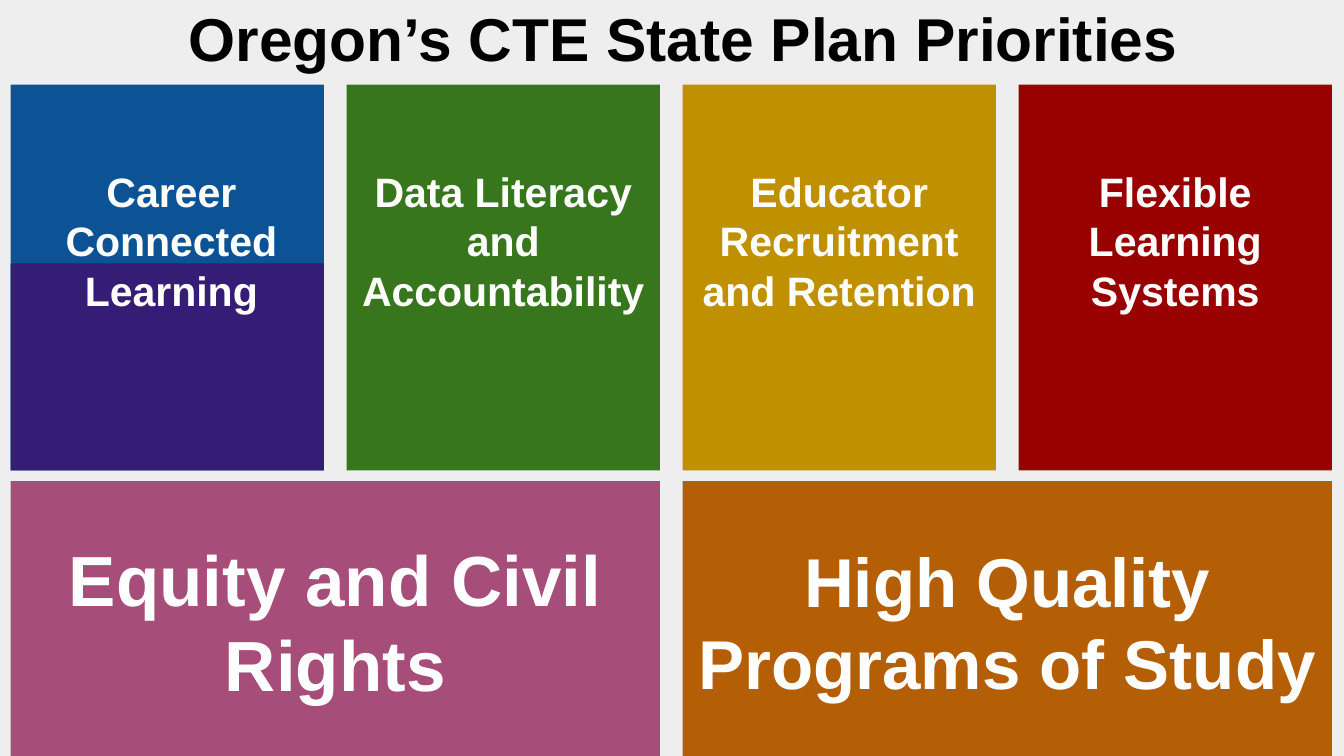
from pptx import Presentation
from pptx.dml.color import RGBColor
from pptx.enum import shapes, text
from pptx.util import Inches, Pt

FONT = "Arial"
GREY = "EEEEEE"
WIDTH = 10
LEFT, PITCH, GAP = 0.08, 2.5, 0.17


def rgb(value):
    return RGBColor.from_string(value)


def write(shape, lines, size, color="FFFFFF", inset=0.1, spacing=1.0,
          anchor=text.MSO_ANCHOR.MIDDLE):
    """Fill a shape with bold centred paragraphs."""
    tf = shape.text_frame
    tf.word_wrap = True
    tf.auto_size = text.MSO_AUTO_SIZE.NONE
    tf.vertical_anchor = anchor
    tf.margin_left = tf.margin_right = Inches(0.1)
    tf.margin_top = tf.margin_bottom = Inches(inset)
    tf.text = "\n".join(lines)
    for p in tf.paragraphs:
        p.alignment = text.PP_ALIGN.CENTER
        p.line_spacing = spacing
        p.font.name, p.font.size, p.font.bold = FONT, Pt(size), True
        p.font.color.rgb = rgb(color)


def add_tile(s, box, fill, lines=(), size=22):
    """Plain rectangle, with a label when lines are given."""
    sp = s.shapes.add_shape(shapes.MSO_SHAPE.RECTANGLE, *map(Inches, box))
    sp.shadow.inherit = False
    sp.fill.solid()
    sp.fill.fore_color.rgb = rgb(fill)
    sp.line.fill.background()
    if lines:
        write(sp, lines, size)


def add_career_tile(s, x, y, w, h):
    """Two-tone tile with its label across both colours."""
    add_tile(s, (x, y, w, h), "0B5394")
    add_tile(s, (x, y + 1.45, w, h - 1.45), "351C75")
    label = s.shapes.add_textbox(*map(Inches, (x + 0.25, y + 0.63, 1.89, 1.31)))
    write(label, ["Career Connected Learning"], 22, anchor=text.MSO_ANCHOR.TOP)


def add_top_row(s, x, y, w, h):
    add_career_tile(s, x, y + 0.43, w, h - 0.43)
    tiles = [
        ("38761D", ["Data Literacy and Accountability"]),
        ("BF9000", ["Educator Recruitment and Retention"]),
        ("990000", ["Flexible Learning", "Systems"]),
    ]
    for i, (fill, lines) in enumerate(tiles, start=1):
        add_tile(s, (x + i * PITCH, y, w, h), fill, lines)


def add_bottom_row(s, x, y, w, h):
    tiles = [
        ("A64D79", "Equity and Civil Rights", 38),
        ("B45F06", "High Quality Programs of Study", 37),
    ]
    for i, (fill, label, size) in enumerate(tiles):
        add_tile(s, (x + i * 2 * PITCH, y, w, h), fill, [label], size)


def add_title(s, x, y, w, h):
    title = s.shapes.title
    title.left, title.top, title.width, title.height = map(Inches, (x, y, w, h))
    title.fill.solid()
    title.fill.fore_color.rgb = rgb(GREY)
    write(title, ["Oregon’s CTE State Plan Priorities"], 32.4, "000000",
          inset=0.05, spacing=0.9)
    # The title band covers the tops of the tiles
    s.shapes._spTree.append(title._element)


def main():
    prs = Presentation()
    prs.slide_width = Inches(WIDTH)
    prs.slide_height = Inches(WIDTH * 9 / 16)
    s = prs.slides.add_slide(prs.slide_layouts[5])

    add_tile(s, (0, 0.05, WIDTH, 5.7), GREY)  # backdrop
    add_top_row(s, LEFT, 0.08, PITCH - GAP, 3.42)
    add_bottom_row(s, LEFT, 3.58, 2 * PITCH - GAP, 2.08)
    add_title(s, 0, 0, 10.17, 0.63)

    prs.save("out.pptx")


if __name__ == "__main__":
    main()
